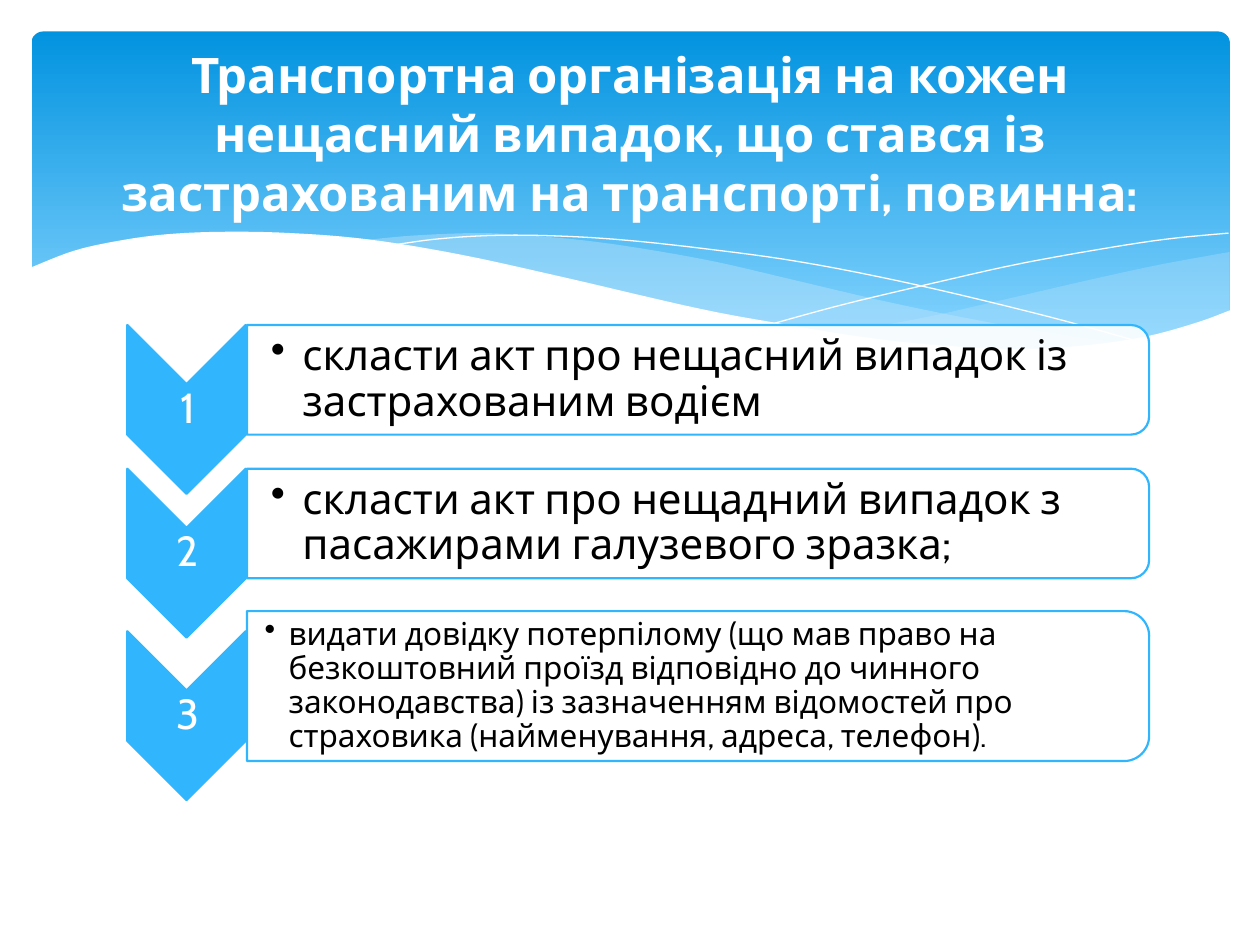
from lxml.etree import SubElement
from pptx import Presentation
from pptx.dml.color import RGBColor
from pptx.enum.shapes import MSO_SHAPE
from pptx.enum.text import MSO_ANCHOR, MSO_AUTO_SIZE, PP_ALIGN
from pptx.oxml.ns import qn
from pptx.util import Inches, Pt

WHITE = RGBColor(0xFF, 0xFF, 0xFF)
BLACK = RGBColor(0x00, 0x00, 0x00)
ACCENT = RGBColor(0x31, 0xB6, 0xFD)
BAND_TOP = RGBColor(0x02, 0x93, 0xE0)
BAND_BOTTOM = RGBColor(0x83, 0xD3, 0xFE)
WAVE = RGBColor(0xC6, 0xE7, 0xFC)

TITLE = ("Транспортна організація на кожен нещасний випадок, "
         "що стався із застрахованим на транспорті, повинна:")

# Box top, box height, chevron top, text size, hanging indent, left inset, text
STEPS = [
    (2.58, 0.87, 2.58, 24, 0.25, 0.19,
     "скласти акт про нещасний випадок із застрахованим водієм"),
    (3.72, 0.87, 3.72, 24, 0.25, 0.19,
     "скласти акт про нещадний випадок з пасажирами галузевого зразка;"),
    (4.85, 1.19, 5.01, 18, 0.19, 0.14,
     "видати довідку потерпілому (що мав право на безкоштовний проїзд відповідно "
     "до чинного законодавства) із зазначенням відомостей про страховика "
     "(найменування, адреса, телефон)."),
]

# Each wave is a list of curves joined by straight edges
RIGHT_WAVE = [
    [(9.76, 2), (9.21, 2.1), (8.61, 2.23), (7.79, 2.42), (7.29, 2.53), (6.61, 2.65)],
    [(6.61, 2.65), (7.19, 2.72), (7.69, 2.77), (8.14, 2.78), (8.63, 2.75),
     (9.05, 2.69), (9.42, 2.59), (9.76, 2.47)],
]
MIDDLE_WAVE = [
    [(8.93, 2.73), (8.37, 2.65), (7.75, 2.54), (7.06, 2.4), (6.29, 2.22), (5.69, 2.08),
     (5.14, 1.98), (4.65, 1.91), (4.2, 1.87), (3.8, 1.85), (3.28, 1.87), (2.86, 1.91)],
    [(2.86, 1.91), (3.42, 1.99), (4.04, 2.11), (4.49, 2.22), (5.3, 2.4), (6.01, 2.55),
     (6.65, 2.66), (7.22, 2.74), (7.73, 2.77), (8.18, 2.78), (8.57, 2.77), (8.93, 2.73)],
]
FALLING_LINE = [
    [(3.09, 1.95), (3.44, 1.9), (3.87, 1.87), (4.33, 1.87), (4.89, 1.9), (5.56, 1.97),
     (6.36, 2.08), (7.27, 2.26), (8.31, 2.51), (9.07, 2.72)],
]
RISING_LINE = [
    [(6.13, 2.57), (6.72, 2.41), (7.48, 2.23), (8.06, 2.1), (8.66, 1.99),
     (9.24, 1.9), (9.75, 1.85)],
]
WHITE_WAVE = [
    [(9.77, 2.46), (9.5, 2.56), (9.1, 2.67), (8.63, 2.74), (8.09, 2.77), (7.44, 2.74),
     (6.88, 2.68), (6.26, 2.58), (5.55, 2.45), (4.47, 2.2), (3.65, 2.02), (2.92, 1.9),
     (2.3, 1.85), (1.77, 1.84), (1.32, 1.86), (0.95, 1.91), (0.59, 1.99), (0.23, 2.13)],
    [(0.23, 3.29), (9.77, 3.29)],
]


def smooth(knots, steps=6):
    """Return points of a Catmull-Rom curve through the knots."""
    padded = [knots[0], *knots, knots[-1]]
    points = [knots[0]]
    for a, b, c, d in zip(padded, padded[1:], padded[2:], padded[3:]):
        for step in range(1, steps + 1):
            t = step / steps
            points.append(tuple(
                q + t * (r - p + t * (2 * p - 5 * q + 4 * r - s
                                      + t * (3 * (q - r) + s - p))) / 2
                for p, q, r, s in zip(a, b, c, d)))
    return points


class SlideBuilder:
    font_name = "Cabin"

    def __init__(self, slide):
        self.slide = slide
        self.shapes = slide.shapes

    def paint(self, shape, color, opacity=100):
        shape.shadow.inherit = False
        shape.fill.solid()
        shape.fill.fore_color.rgb = color
        if opacity < 100:
            color_element = shape.element.spPr.find(qn("a:solidFill"))[0]
            SubElement(color_element, qn("a:alpha"), val=str(opacity * 1000))

    def set_text(self, shape, text, size, color, alignment, bold=False):
        frame = shape.text_frame
        frame.text = text
        frame.word_wrap = True
        frame.auto_size = MSO_AUTO_SIZE.NONE
        frame.vertical_anchor = MSO_ANCHOR.MIDDLE
        paragraph = frame.paragraphs[0]
        paragraph.alignment = alignment
        font = paragraph.runs[0].font
        font.name, font.size, font.bold = self.font_name, Pt(size), bold
        font.color.rgb = color
        return paragraph

    def band(self, left, top, width, height):
        shape = self.shapes.add_shape(MSO_SHAPE.ROUNDED_RECTANGLE, Inches(left),
                                      Inches(top), Inches(width), Inches(height))
        shape.adjustments[0] = 0.034
        shape.shadow.inherit = False
        shape.line.fill.background()
        shape.fill.gradient()
        shape.fill.gradient_angle = 270
        stops = shape.fill.gradient_stops
        for stop, position, color in zip(stops, (0, 0.9), (BAND_TOP, BAND_BOTTOM)):
            stop.position = position
            stop.color.rgb = color

    def curve(self, curves, closed):
        points = [(Inches(x), Inches(y)) for knots in curves
                  for x, y in (smooth(knots) if len(knots) > 2 else knots)]
        builder = self.shapes.build_freeform(*points[0])
        builder.add_line_segments(points[1:], close=closed)
        return builder.convert_to_shape()

    def wave(self, curves, color, opacity=100):
        shape = self.curve(curves, closed=True)
        self.paint(shape, color, opacity)
        shape.line.fill.background()

    def wave_line(self, curves):
        shape = self.curve(curves, closed=False)
        shape.shadow.inherit = False
        shape.fill.background()
        shape.line.color.rgb = WHITE
        shape.line.width = Pt(0)

    def turned_shape(self, kind, left, top, width, height, color, opacity=100):
        """Add a shape turned by 90 degrees that covers the given area."""
        shift = (width - height) / 2
        shape = self.shapes.add_shape(kind, Inches(left + shift), Inches(top - shift),
                                      Inches(height), Inches(width))
        shape.rotation = 90
        self.paint(shape, color, opacity)
        shape.line.color.rgb = ACCENT
        shape.line.width = Pt(1.25)

    def text_box(self, left, top, width, height, text, size, color,
                 alignment, margin, left_margin):
        box = self.shapes.add_textbox(Inches(left), Inches(top),
                                      Inches(width), Inches(height))
        frame = box.text_frame
        frame.margin_top = frame.margin_right = frame.margin_bottom = Inches(margin)
        frame.margin_left = Inches(left_margin)
        paragraph = self.set_text(box, text, size, color, alignment)
        paragraph.line_spacing = 0.9
        return paragraph

    def bullet(self, paragraph, indent):
        paragraph.level = 1
        properties = paragraph._p.get_or_add_pPr()
        properties.set("marL", str(Inches(indent)))
        properties.set("indent", str(-Inches(indent)))
        SubElement(properties, qn("a:buChar"), char="•")

    def step(self, number, top, height, chevron_top, size, indent, inset, text):
        self.turned_shape(MSO_SHAPE.CHEVRON, 1.01, chevron_top, 0.94, 1.34, ACCENT)
        self.text_box(1.02, chevron_top + 0.47, 0.94, 0.4, str(number), 24, WHITE,
                      PP_ALIGN.CENTER, 0.02, 0.02)
        self.turned_shape(MSO_SHAPE.ROUND_2_SAME_RECTANGLE, 1.96, top, 7.16, height,
                          WHITE, 90)
        paragraph = self.text_box(1.96, top + 0.05, 7.11, height - 0.1, text, size,
                                  BLACK, PP_ALIGN.LEFT, 0.02, inset)
        self.bullet(paragraph, indent)

    def title(self, text):
        shape = self.shapes.title
        shape.left, shape.top = Inches(0.5), Inches(0.37)
        shape.width, shape.height = Inches(9), Inches(1.37)
        self.set_text(shape, text, 28, WHITE, PP_ALIGN.CENTER, bold=True)
        # Bring the title in front of the band
        shape.element.getparent().append(shape.element)


def main():
    presentation = Presentation()
    presentation.slide_width, presentation.slide_height = Inches(10), Inches(7.5)
    builder = SlideBuilder(presentation.slides.add_slide(presentation.slide_layouts[5]))
    builder.band(0.25, 0.25, 9.51, 2.7)
    builder.wave(RIGHT_WAVE, WAVE, 29)
    builder.wave(MIDDLE_WAVE, WAVE, 40)
    builder.wave_line(FALLING_LINE)
    builder.wave_line(RISING_LINE)
    builder.wave(WHITE_WAVE, WHITE)
    for number, step in enumerate(STEPS, start=1):
        builder.step(number, *step)
    builder.title(TITLE)
    presentation.save("out.pptx")


if __name__ == "__main__":
    main()
